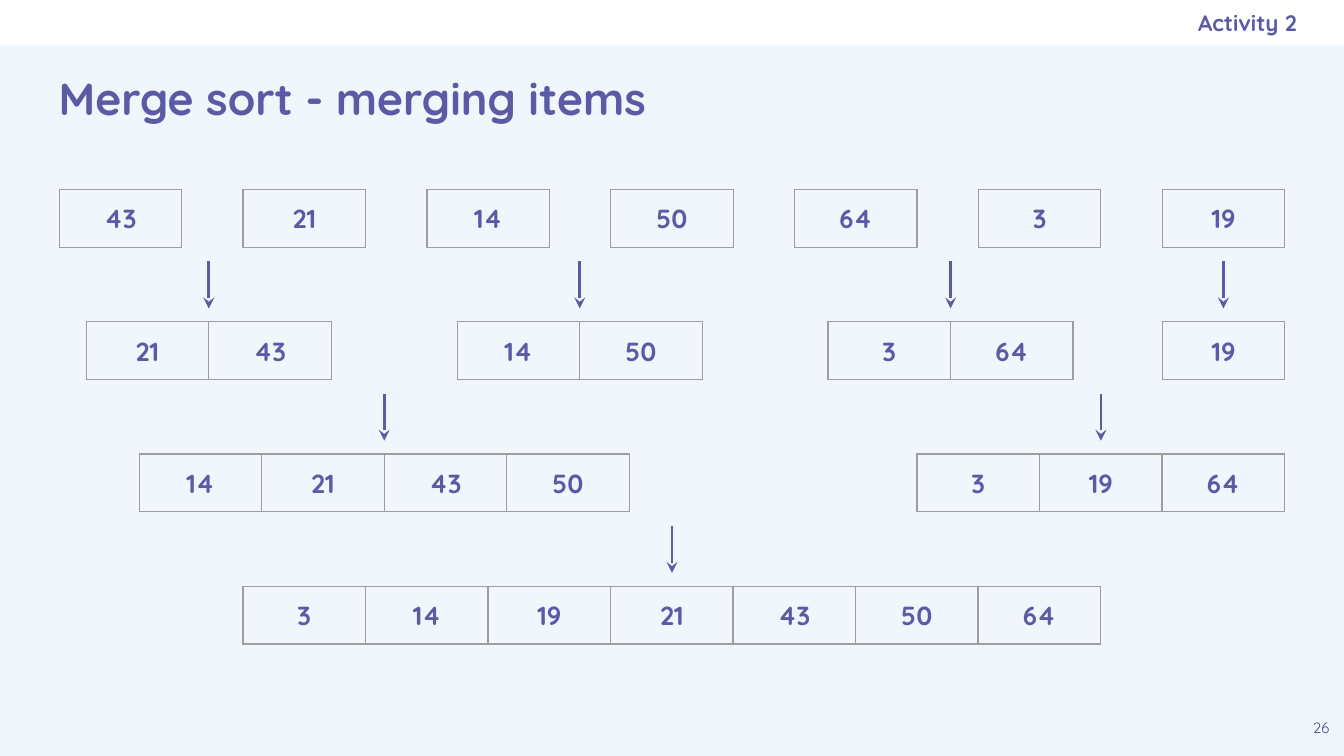
from dataclasses import dataclass

from lxml import etree
from pptx import Presentation
from pptx.dml.color import RGBColor
from pptx.enum.shapes import MSO_CONNECTOR, MSO_SHAPE
from pptx.enum.text import MSO_ANCHOR, PP_ALIGN
from pptx.oxml import parse_xml
from pptx.oxml.ns import nsdecls, qn
from pptx.util import Cm, Pt

LEFT, CENTER, RIGHT = PP_ALIGN.LEFT, PP_ALIGN.CENTER, PP_ALIGN.RIGHT
TOP, MIDDLE = MSO_ANCHOR.TOP, MSO_ANCHOR.MIDDLE
STRAIGHT, RECTANGLE = MSO_CONNECTOR.STRAIGHT, MSO_SHAPE.RECTANGLE


@dataclass(frozen=True)
class Theme:
    font: str = "Quicksand"
    background: str = "F1F5FC"
    banner: str = "FFFFFF"
    accent: str = "5B5BA5"
    page_number: str = "494985"
    border: str = "9E9E9E"
    title_size: int = 24
    number_size: int = 14
    banner_size: int = 12
    page_size: int = 8


theme = Theme()


def format_paragraph(p, size, color, align, bold=True):
    p.alignment = align
    for r in p.runs:
        r.font.name = theme.font
        r.font.size = Pt(size)
        r.font.bold = bold
        r.font.color.rgb = RGBColor.from_string(color)


def add_border(cell):
    """Draw a thin line on all four sides of a table cell."""
    tcPr = cell._tc.get_or_add_tcPr()
    for i, side in enumerate("LRTB"):
        tcPr.insert(i, parse_xml(
            f'<a:ln{side} {nsdecls("a")} w="{Pt(0.75)}"><a:solidFill>'
            f'<a:srgbClr val="{theme.border}"/></a:solidFill></a:ln{side}>'))


# Lengths in centimetres
WIDTH, HEIGHT = 25.4, 14.29
MARGIN, INSET, BANNER = 1.12, 0.25, 0.86
CELL = (WIDTH - 2 * MARGIN) / 10  # seven cells and six half-cell gaps
CELL_HEIGHT = 1.08
FIRST_TOP, ROW_PITCH = 3.58, 2.5
ARROW_START, ARROW_END = 1.14, 0.25  # above the list it points to

prs = Presentation()
prs.slide_width, prs.slide_height = Cm(WIDTH), Cm(HEIGHT)
s = prs.slides.add_slide(prs.slide_layouts[6])
s.background.fill.solid()
s.background.fill.fore_color.rgb = RGBColor.from_string(theme.background)

banner = s.shapes.add_shape(RECTANGLE, 0, 0, Cm(WIDTH), Cm(BANNER))
banner.shadow.inherit = False
banner.fill.solid()
banner.fill.fore_color.rgb = RGBColor.from_string(theme.banner)
banner.line.fill.background()

# text, left, top, width, height, right inset, anchor, size, colour, align, bold
labels = [
    ("Merge sort - merging items", 0.86, 0.86, 23.67, 1.96, INSET, MIDDLE,
     theme.title_size, theme.accent, LEFT, True),
    ("26", 24.54, 13.41, 0.86, 0.86, INSET, TOP,
     theme.page_size, theme.page_number, CENTER, False),
    ("Activity 2", 14.6, 0, 9.91, BANNER, 0, MIDDLE,
     theme.banner_size, theme.accent, RIGHT, True),
]
for text, x, y, w, h, right, anchor, size, color, align, bold in labels:
    tf = s.shapes.add_textbox(Cm(x), Cm(y), Cm(w), Cm(h)).text_frame
    tf.word_wrap = True
    tf.vertical_anchor = anchor
    tf.margin_left = tf.margin_top = tf.margin_bottom = Cm(INSET)
    tf.margin_right = Cm(right)
    tf.text = text
    format_paragraph(tf.paragraphs[0], size, color, align, bold)

# Each merge step holds its lists as (left, values)
last_left = WIDTH - MARGIN - CELL
items = [43, 21, 14, 50, 64, 3, 19]
steps = [
    [(MARGIN + i * 1.5 * CELL, [item]) for i, item in enumerate(items)],
    [(1.63, [21, 43]), (8.64, [14, 50]), (15.65, [3, 64]), (last_left, [19])],
    [(2.63, [14, 21, 43, 50]), (last_left - 2 * CELL, [3, 19, 64])],
    [((WIDTH - 7 * CELL) / 2, sorted(items))],
]
for step, lists in enumerate(steps):
    top = FIRST_TOP + step * ROW_PITCH
    for left, values in lists:
        width = len(values) * CELL
        table = s.shapes.add_table(1, len(values), Cm(left), Cm(top),
                                   Cm(width), Cm(CELL_HEIGHT)).table
        table.first_row = table.horz_banding = False
        for column, value in enumerate(values):
            table.columns[column].width = Cm(CELL)
            cell = table.cell(0, column)
            cell.fill.background()
            cell.margin_left = cell.margin_right = Cm(INSET)
            cell.margin_top = cell.margin_bottom = Cm(INSET)
            cell.text = str(value)
            format_paragraph(cell.text_frame.paragraphs[0],
                             theme.number_size, theme.accent, CENTER)
            add_border(cell)

        if step > 0:
            x = Cm(left + width / 2)
            arrow = s.shapes.add_connector(STRAIGHT, x, Cm(top - ARROW_START),
                                           x, Cm(top - ARROW_END))
            arrow.line.width = Pt(1.5)
            arrow.line.color.rgb = RGBColor.from_string(theme.accent)
            etree.SubElement(arrow.line._get_or_add_ln(), qn("a:tailEnd"),
                             type="stealth")
            etree.SubElement(arrow._element.spPr, qn("a:effectLst"))

prs.save("out.pptx")
